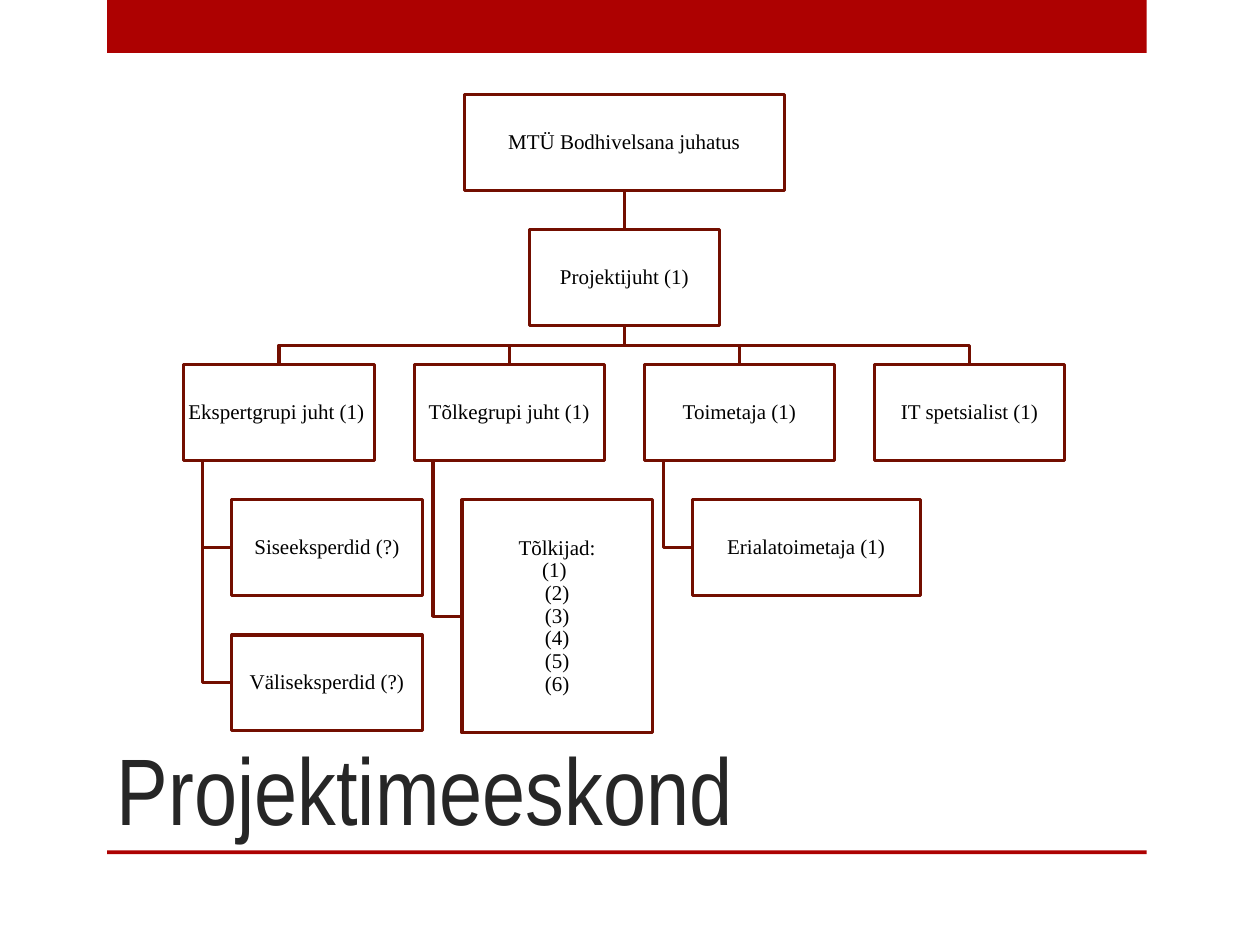
from dataclasses import dataclass

from lxml.etree import SubElement
from pptx import Presentation
from pptx.dml.color import RGBColor
from pptx.enum.shapes import MSO_CONNECTOR, MSO_SHAPE
from pptx.enum.text import MSO_ANCHOR, PP_ALIGN
from pptx.oxml.ns import qn
from pptx.util import Inches, Pt


@dataclass(frozen=True)
class Theme:
    accent: RGBColor = RGBColor(0xAD, 0x01, 0x01)
    outline: RGBColor = RGBColor(0x73, 0x0E, 0x00)
    paper: RGBColor = RGBColor(0xFF, 0xFF, 0xFF)
    ink: RGBColor = RGBColor(0x00, 0x00, 0x00)
    heading: RGBColor = RGBColor(0x26, 0x26, 0x26)
    heading_font: str = "Arial Narrow"
    body_font: str = "Times New Roman"
    heading_size: int = 54
    body_size: int = 12
    line_width: float = 1.75


@dataclass(frozen=True)
class Box:
    left: float
    top: float
    width: float
    height: float

    @property
    def center(self):
        return self.left + self.width / 2

    @property
    def middle(self):
        return self.top + self.height / 2

    @property
    def bottom(self):
        return self.top + self.height

    def lengths(self):
        return [Inches(v) for v in (self.left, self.top, self.width, self.height)]


THEME = Theme()
NODE_WIDTH, NODE_HEIGHT = 1.51, 0.76
INDENT, STEM_INSET = 0.38, 0.15
GROUPS = [
    ("Ekspertgrupi juht (1) ", [("Siseeksperdid (?)", NODE_WIDTH, NODE_HEIGHT),
                                ("Väliseksperdid (?)", NODE_WIDTH, NODE_HEIGHT)]),
    ("Tõlkegrupi juht (1)",
     [("Tõlkijad:\n(1) \n(2)\n(3)\n(4)\n(5)\n(6)", NODE_WIDTH, 1.85)]),
    ("Toimetaja (1)", [("Erialatoimetaja (1)", 1.81, NODE_HEIGHT)]),
    ("IT spetsialist (1)", []),
]


def write_text(shape, text, *, font, size, color, align, anchor,
               margins=(0.1, 0.05), line_spacing=None, space_after=None):
    frame = shape.text_frame
    frame.word_wrap = True
    frame.vertical_anchor = anchor
    frame.margin_left = frame.margin_right = Inches(margins[0])
    frame.margin_top = frame.margin_bottom = Inches(margins[1])
    paragraph = frame.paragraphs[0]
    paragraph.text = text
    paragraph.alignment = align
    paragraph.line_spacing = line_spacing
    paragraph.space_after = space_after
    for run in paragraph.runs:
        run.font.name = font
        run.font.size = Pt(size)
        run.font.color.rgb = color
    for line_break in paragraph._p.findall(qn("a:br")):
        SubElement(line_break, qn("a:rPr"), sz=str(size * 100))


def style_line(shape):
    shape.line.color.rgb = THEME.outline
    shape.line.width = Pt(THEME.line_width)


def add_bar(slide, box):
    bar = slide.shapes.add_shape(MSO_SHAPE.RECTANGLE, *box.lengths())
    bar.shadow.inherit = False
    bar.fill.solid()
    bar.fill.fore_color.rgb = THEME.accent
    bar.line.fill.background()


def add_title(slide, box, text):
    write_text(slide.shapes.add_textbox(*box.lengths()), text,
               font=THEME.heading_font, size=THEME.heading_size,
               color=THEME.heading, align=PP_ALIGN.LEFT, anchor=MSO_ANCHOR.BOTTOM)


def add_node(slide, box, text):
    node = slide.shapes.add_shape(MSO_SHAPE.RECTANGLE, *box.lengths())
    node.shadow.inherit = False
    node.fill.solid()
    node.fill.fore_color.rgb = THEME.paper
    style_line(node)
    write_text(node, text, font=THEME.body_font, size=THEME.body_size,
               color=THEME.ink, align=PP_ALIGN.CENTER, anchor=MSO_ANCHOR.MIDDLE,
               margins=(0.01, 0.01), line_spacing=0.9, space_after=Pt(4))


def add_elbow(slide, points):
    start, *rest = [(Inches(x), Inches(y)) for x, y in points]
    builder = slide.shapes.build_freeform(*start)
    builder.add_line_segments(rest, close=False)
    elbow = builder.convert_to_shape()
    elbow.shadow.inherit = False
    elbow.fill.background()
    style_line(elbow)


def add_stem(slide, parent, child):
    stem = slide.shapes.add_connector(
        MSO_CONNECTOR.STRAIGHT, Inches(parent.center), Inches(parent.bottom),
        Inches(child.center), Inches(child.top))
    SubElement(stem._element.spPr, qn("a:effectLst"))
    style_line(stem)


def add_branch(slide, parent, child):
    turn = (parent.bottom + child.top) / 2
    add_elbow(slide, [(parent.center, parent.bottom), (parent.center, turn),
                      (child.center, turn), (child.center, child.top)])


def add_hanger(slide, parent, child):
    stem = parent.left + STEM_INSET
    add_elbow(slide, [(stem, parent.bottom), (stem, child.middle),
                      (child.left, child.middle)])


def add_organisation(slide, area):
    row_step = (area.height - NODE_HEIGHT) / 4
    column_step = (area.width - NODE_WIDTH) / (len(GROUPS) - 1)

    def row_top(row):
        return area.top + row * row_step

    def centered(width, row):
        return Box(area.center - width / 2, row_top(row), width, NODE_HEIGHT)

    board, manager = centered(2.54, 0), centered(NODE_WIDTH, 1)
    nodes = [(board, "MTÜ Bodhivelsana juhatus"), (manager, "Projektijuht (1)")]
    add_stem(slide, board, manager)
    for column, (lead_text, members) in enumerate(GROUPS):
        lead = Box(area.left + column * column_step, row_top(2),
                   NODE_WIDTH, NODE_HEIGHT)
        nodes.append((lead, lead_text))
        add_branch(slide, manager, lead)
        for row, (text, width, height) in enumerate(members, start=3):
            member = Box(lead.left + INDENT, row_top(row), width, height)
            nodes.append((member, text))
            add_hanger(slide, lead, member)
    for box, text in nodes:
        add_node(slide, box, text)


def main():
    presentation = Presentation()
    presentation.slide_width, presentation.slide_height = Inches(10), Inches(7.5)
    slide = presentation.slides.add_slide(presentation.slide_layouts[6])
    add_bar(slide, Box(0.85, 0, 8.25, 0.42))
    add_bar(slide, Box(0.85, 6.75, 8.25, 0.03))
    add_title(slide, Box(0.83, 5, 7.42, 1.75), "Projektimeeskond")
    add_organisation(slide, Box(1.46, 0.75, 6.99, 5.05))
    presentation.save("out.pptx")


if __name__ == "__main__":
    main()
